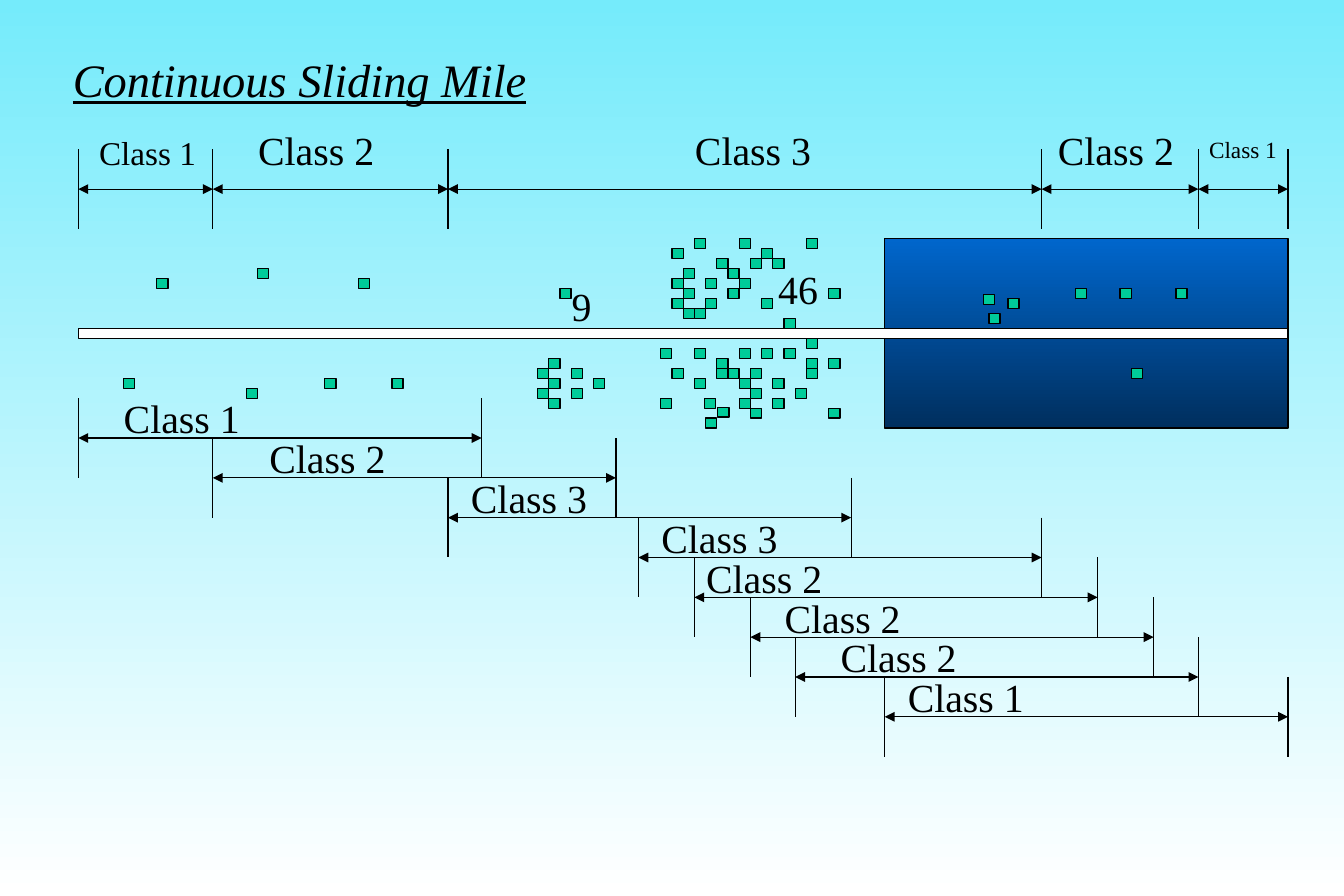
from dataclasses import dataclass

from lxml.etree import SubElement
from pptx import Presentation
from pptx.dml.color import RGBColor
from pptx.enum.shapes import MSO_CONNECTOR, MSO_SHAPE
from pptx.enum.text import MSO_ANCHOR, MSO_AUTO_SIZE, PP_ALIGN
from pptx.oxml.ns import qn
from pptx.util import Inches, Pt


@dataclass(frozen=True)
class Theme:
    font: str = "Times New Roman"
    ink: str = "000000"
    road: str = "FFFFFF"
    house: str = "00CC99"
    sky: tuple = ("75EBFB", "FFFFFF")
    block: tuple = ("0066CC", "002F5E")
    title: int = 28
    label: int = 24
    small: int = 20
    tiny: int = 14
    line: float = 0.75


THEME = Theme()
WIDTH, HEIGHT = Inches(11.25), Inches(7.5)
COLUMNS, ROWS = 120, 90

MILE = 36            # columns in one sliding mile
TICK = 4             # rows a tick reaches above and below its arrow
FIRST_MILE_ROW = 44
CLASS_ROW = 19
BOUNDARIES = (7, 19, 40, 93, 107, 115)

# text, left, top, width, height, size
CLASS_LABELS = (
    ("Class 1", 7.8, 12.7, 10.8, 5.2, THEME.small),
    ("Class 2", 22, 12, 12.5, 6, THEME.label),
    ("Class 3", 61, 12, 12.5, 6, THEME.label),
    ("Class 2", 93.4, 12, 12.5, 6, THEME.label),
    ("Class 1", 106.9, 13, 8.2, 4, THEME.tiny),
)

# text, first column of the mile, left of the label
SLIDING_MILES = (
    ("Class 1", 7, 10), ("Class 2", 19, 23), ("Class 3", 40, 41), ("Class 3", 57, 58),
    ("Class 2", 62, 62), ("Class 2", 67, 69), ("Class 2", 71, 74), ("Class 1", 79, 80),
)

# Houses are listed as row: columns
SCATTERED_HOUSES = {
    24: (62, 66, 72), 25: (60, 68), 26: (64, 67, 69), 27: (23, 61, 65),
    28: (14, 32, 60, 63, 66), 29: (61, 65, 74, 96, 100, 105), 29.6: (87.8,),
    30: (60, 63, 68, 90), 31: (61, 62), 31.5: (88.3,), 32: (70,), 34: (72,),
    35: (59, 62, 66, 68, 70), 36: (64, 72, 74), 37: (60, 64, 65, 72, 101),
    38: (11, 29, 35, 62), 39: (22,), 40: (59, 62.9), 40.9: (64.1,),
    41: (74,), 42: (63,),
}
WEST_CLUSTER = {29: (50,), 36: (49,), 37: (48, 51), 38: (49, 53), 39: (48, 51), 40: (49,)}
EAST_CLUSTER = {37: (67,), 38: (66, 69), 39: (67, 71), 40: (66, 69), 41: (67,)}


def across(columns):
    return round(WIDTH * columns / COLUMNS)


def down(rows):
    return round(HEIGHT * rows / ROWS)


def paint(fill, colour):
    """Fill with one colour, or with a top-to-bottom gradient for a pair."""
    if isinstance(colour, str):
        fill.solid()
        fill.fore_color.rgb = RGBColor.from_string(colour)
        return
    fill.gradient()
    fill.gradient_angle = 270
    for stop, shade, position in zip(fill.gradient_stops, colour, (0, 1)):
        stop.color.rgb = RGBColor.from_string(shade)
        stop.position = position


def outline(line):
    line.color.rgb = RGBColor.from_string(THEME.ink)
    line.width = Pt(THEME.line)


def add_block(shapes, left, top, width, height, colour):
    block = shapes.add_shape(MSO_SHAPE.RECTANGLE, across(left), down(top),
                             across(width), down(height))
    block.shadow.inherit = False
    paint(block.fill, colour)
    outline(block.line)


def add_houses(shapes, houses):
    for row, columns in houses.items():
        for column in columns:
            add_block(shapes, column, row, 1, 1, THEME.house)


def add_line(page, start, end, arrows=False):
    """Join two (column, row) points, with arrowheads at both ends if asked."""
    line = page.shapes.add_connector(MSO_CONNECTOR.STRAIGHT, across(start[0]), down(start[1]),
                                     across(end[0]), down(end[1]))
    outline(line.line)
    if arrows:
        stroke = line.line._get_or_add_ln()
        for end_name in ("a:headEnd", "a:tailEnd"):
            SubElement(stroke, qn(end_name), type="triangle")
    SubElement(line._element.spPr, qn("a:effectLst"))


def add_tick(page, column, row):
    add_line(page, (column, row - TICK), (column, row + TICK))


def add_label(page, text, left, top, width, height, size=THEME.label,
              centred=False, heading=False):
    box = page.shapes.add_textbox(across(left), down(top), across(width), down(height))
    frame = box.text_frame
    frame.word_wrap = False
    frame.auto_size = MSO_AUTO_SIZE.SHAPE_TO_FIT_TEXT
    para = frame.paragraphs[0]
    if centred:
        frame.vertical_anchor = MSO_ANCHOR.MIDDLE
        para.alignment = PP_ALIGN.CENTER
    span = para.add_run()
    span.text = text
    span.font.name = THEME.font
    span.font.size = Pt(size)
    span.font.color.rgb = RGBColor.from_string(THEME.ink)
    if heading:
        span.font.italic = span.font.underline = True


def add_class_scale(page):
    for column in BOUNDARIES:
        add_tick(page, column, CLASS_ROW)
    for start, end in zip(BOUNDARIES, BOUNDARIES[1:]):
        add_line(page, (start, CLASS_ROW), (end, CLASS_ROW), arrows=True)
    for label in CLASS_LABELS:
        add_label(page, *label)


def add_sliding_miles(page):
    for index, (text, start, label_left) in enumerate(SLIDING_MILES):
        row = FIRST_MILE_ROW + index * TICK
        add_tick(page, start, row)
        add_tick(page, start + MILE, row)
        add_line(page, (start, row), (start + MILE, row), arrows=True)
        add_label(page, text, label_left, row - 5, 12.5, 6)


def main():
    deck = Presentation()
    deck.slide_width, deck.slide_height = WIDTH, HEIGHT
    page = deck.slides.add_slide(deck.slide_layouts[6])
    paint(page.background.fill, THEME.sky)

    add_block(page.shapes, 79, 24, MILE, 19, THEME.block)
    add_block(page.shapes, 7, 33, 108, 1, THEME.road)
    add_label(page, "Continuous Sliding Mile", 5.4, 4.5, 42.7, 6.8, THEME.title,
              centred=True, heading=True)
    add_class_scale(page)

    add_houses(page.shapes, SCATTERED_HOUSES)
    for cluster in (WEST_CLUSTER, EAST_CLUSTER):
        add_houses(page.shapes.add_group_shape().shapes, cluster)
    add_label(page, "9", 50, 27.7, 4, 6)
    add_label(page, "46", 68.4, 26, 5.7, 6, centred=True)

    add_sliding_miles(page)
    deck.save("out.pptx")


if __name__ == "__main__":
    main()
